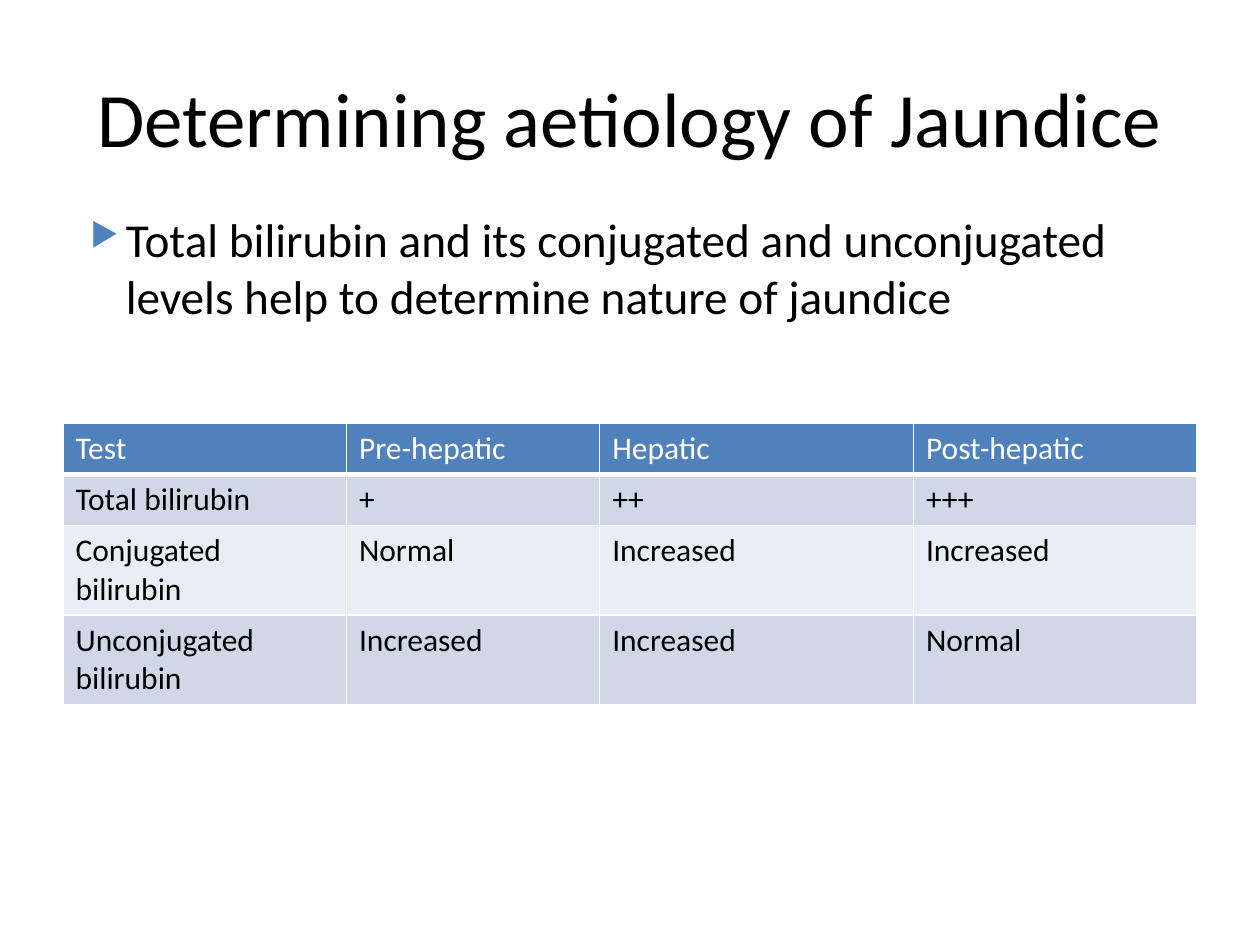
from pptx import Presentation
from pptx.dml.color import RGBColor
from pptx.enum.text import MSO_ANCHOR, PP_ALIGN
from pptx.oxml import parse_xml
from pptx.oxml.ns import nsdecls
from pptx.util import Pt

FONT = "Calibri"
BLACK, WHITE, BLUE = "000000", "FFFFFF", "4F81BD"
BANDS = ["D0D8E8", "E9EDF4"]
COLUMN_WIDTHS = [162, 144.7, 179.3, 162]
ROW_HEIGHTS = [29.2, 29.2, 50.4, 50.4]
RESULTS = [
    ["Test", "Pre-hepatic", "Hepatic", "Post-hepatic"],
    ["Total bilirubin", "+", "++", "+++"],
    ["Conjugated bilirubin", "Normal", "Increased", "Increased"],
    ["Unconjugated bilirubin", "Increased", "Increased", "Normal"],
]


def rgb(value):
    return RGBColor.from_string(value)


def write(paragraph, words, size, color):
    run = paragraph.add_run()
    run.text = words
    run.font.name = FONT
    run.font.size = Pt(size)
    run.font.color.rgb = rgb(color)


def add_text_frame(slide, box):
    frame = slide.shapes.add_textbox(*map(Pt, box)).text_frame
    frame.word_wrap = True
    return frame


def add_title(slide, box, words):
    frame = add_text_frame(slide, box)
    frame.vertical_anchor = MSO_ANCHOR.MIDDLE
    heading = frame.paragraphs[0]
    heading.alignment = PP_ALIGN.CENTER
    write(heading, words, 44, BLACK)


def add_bullet(slide, box, words):
    point = add_text_frame(slide, box).paragraphs[0]
    properties = point._p.get_or_add_pPr()
    properties.set("marL", str(Pt(28.8)))
    properties.set("indent", str(Pt(-20.2)))
    for element in (
        f'<a:buClr {nsdecls("a")}><a:srgbClr val="{BLUE}"/></a:buClr>',
        f'<a:buSzPct {nsdecls("a")} val="68000"/>',
        f'<a:buChar {nsdecls("a")} char="▶"/>',
    ):
        properties.append(parse_xml(element))
    write(point, words, 27, BLACK)


def set_borders(cell, bottom_width):
    """Draw white lines on all four sides, the bottom one with its own width."""
    properties = cell._tc.get_or_add_tcPr()
    for side, width in (("L", 1), ("R", 1), ("T", 1), ("B", bottom_width)):
        properties.append(parse_xml(
            f'<a:ln{side} {nsdecls("a")} w="{Pt(width)}"><a:solidFill>'
            f'<a:srgbClr val="{WHITE}"/></a:solidFill></a:ln{side}>'))


def add_results_table(slide, box):
    table = slide.shapes.add_table(
        len(RESULTS), len(COLUMN_WIDTHS), *map(Pt, box)).table
    for column, width in zip(table.columns, COLUMN_WIDTHS):
        column.width = Pt(width)
    for r, (row, height) in enumerate(zip(table.rows, ROW_HEIGHTS)):
        row.height = Pt(height)
        is_header = r == 0
        for cell, words in zip(row.cells, RESULTS[r]):
            set_borders(cell, 3 if is_header else 1)
            cell.fill.solid()
            cell.fill.fore_color.rgb = rgb(BLUE if is_header else BANDS[(r - 1) % 2])
            write(cell.text_frame.paragraphs[0], words, 18,
                  WHITE if is_header else BLACK)


def main():
    deck = Presentation()
    deck.slide_width, deck.slide_height = Pt(720), Pt(540)
    slide = deck.slides.add_slide(deck.slide_layouts[6])
    left, width = 36, 648
    add_results_table(slide, (left, 242, width, sum(ROW_HEIGHTS)))
    add_title(slide, (left, 21.6, width, 90), "Determining aetiology of Jaundice")
    add_bullet(slide, (left, 116.6, width, 356.4),
               "Total bilirubin and its conjugated and unconjugated levels "
               "help to determine nature of jaundice")
    deck.save("out.pptx")


if __name__ == "__main__":
    main()
